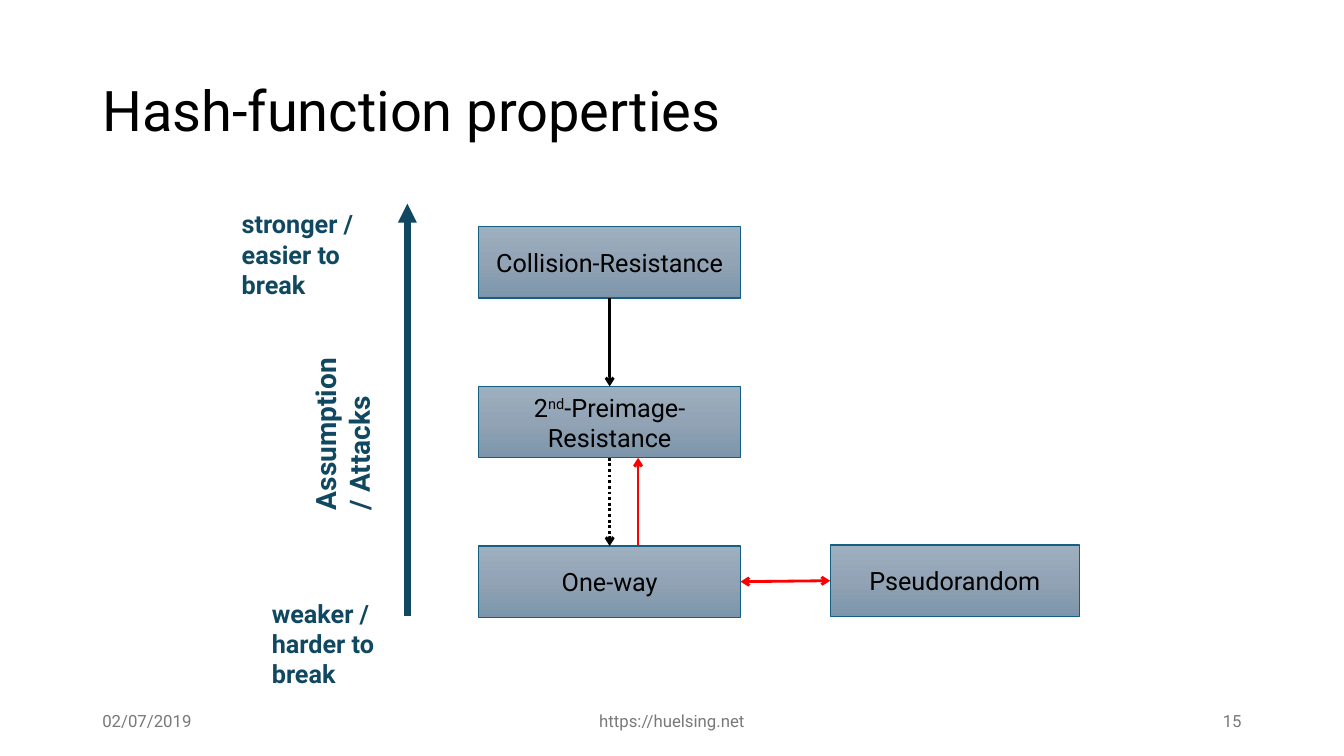
import copy

import pptx
import pptx.util
import pptx.dml.color
import pptx.enum.dml
import pptx.enum.shapes
import pptx.enum.text
import pptx.oxml.ns
import pptx.oxml.xmlchemy

Pt = pptx.util.Pt
ALIGN = pptx.enum.text.PP_ALIGN
ANCHOR = pptx.enum.text.MSO_ANCHOR
FONT = "Roboto"
HUES = {
    "ink": "000000", "gray": "797979", "navy": "104862", "edge": "156082",
    "red": "FF0000", "top": "9EAFBF", "mid": "91A3B4", "low": "7C95AB",
}


def hue(name):
    return pptx.dml.color.RGBColor.from_string(HUES[name])


def write(shape, text, size, color, bold=False, align=ALIGN.LEFT, anchor=ANCHOR.TOP):
    """Fill a shape with text; a ^ pair marks a superscript part."""
    frame = shape.text_frame
    frame.word_wrap = True
    frame.vertical_anchor = anchor
    frame.text = text.replace("^", "")
    for para in frame.paragraphs:
        para.alignment = align
    if "^" in text:
        para = frame.paragraphs[0]
        para.text = ""
        for i, part in enumerate(text.split("^")):
            run = para.add_run()
            run.text = part
            if i % 2:
                run.font._element.set("baseline", "30000")
    for para in frame.paragraphs:
        for run in para.runs:
            run.font.name = FONT
            run.font.size = Pt(size)
            run.font.bold = bold
            run.font.color.rgb = hue(color)


def label(slide, box, *args, **style):
    shape = slide.shapes.add_textbox(*map(Pt, box))
    write(shape, *args, **style)
    return shape


def node(slide, box, text):
    """Gradient rectangle with centred text."""
    shape = slide.shapes.add_shape(
        pptx.enum.shapes.MSO_SHAPE.RECTANGLE, *map(Pt, box))
    shape.shadow.inherit = False
    shape.line.color.rgb = hue("edge")
    shape.line.width = Pt(1)
    fill = shape.fill
    fill.gradient()
    fill.gradient_angle = 270
    first = shape._element.spPr.find(".//" + pptx.oxml.ns.qn("a:gs"))
    first.addnext(copy.deepcopy(first))
    for stop, name, pos in zip(fill.gradient_stops, ("top", "mid", "low"), (0, 0.5, 1)):
        stop.color.rgb = hue(name)
        stop.position = pos
    write(shape, text, 18, "ink", align=ALIGN.CENTER, anchor=ANCHOR.MIDDLE)
    return shape


def arrow(slide, start, end, color, width=2, tip="arrow", both=False, dash=None):
    line = slide.shapes.add_connector(
        pptx.enum.shapes.MSO_CONNECTOR.STRAIGHT, *map(Pt, start + end))
    line.line.color.rgb = hue(color)
    line.line.width = Pt(width)
    if dash:
        line.line.dash_style = dash
    props = line._element.spPr
    pen = props.find(pptx.oxml.ns.qn("a:ln"))
    for tag in ("a:headEnd", "a:tailEnd") if both else ("a:tailEnd",):
        mark = pptx.oxml.xmlchemy.OxmlElement(tag)
        mark.set("type", tip)
        pen.append(mark)
    props.append(pptx.oxml.xmlchemy.OxmlElement("a:effectLst"))
    return line


def link(slide, a, exit, b, entry, color, **style):
    """Arrow joined to the side middles of two nodes."""
    line = arrow(slide, (0, 0), (0, 0), color, **style)
    line.begin_connect(a, exit)
    line.end_connect(b, entry)


def head(slide, box):
    shape = label(slide, box, "Hash-function properties", 40, "ink", anchor=ANCHOR.MIDDLE)
    shape.text_frame.paragraphs[0].line_spacing = 0.9


def scale(slide, box):
    """Strength axis with its labels."""
    x, y, w, h = box
    arrow(slide, (x + w, y + h), (x + w, y), "navy", width=4.5, tip="triangle")
    title = label(slide, (x + 12, y + 132, 133, 55), "Assumption / Attacks",
                  20, "navy", bold=True)
    title.rotation = 270
    label(slide, (x, y, 102, 73), "stronger / easier to break", 18, "navy", bold=True)
    label(slide, (x + 21.5, y + 278, 106, 73), "weaker /\nharder to break",
          18, "navy", bold=True)


def graph(slide, box):
    """Column of properties, one to the side, and what implies what."""
    x, y, w, h = box
    tall, side = 51, 178
    wide, step = 187, (h - tall) / 2
    names = ("Collision-Resistance", "2^nd^-Preimage-Resistance", "One-way")
    coll, second, one = [node(slide, (x, y + i * step, wide, tall), name)
                         for i, name in enumerate(names)]
    rand = node(slide, (x + w - side, y + h - tall - 0.7, side, tall), "Pseudorandom")
    link(slide, coll, 2, second, 0, "ink")
    link(slide, second, 2, one, 0, "ink",
         dash=pptx.enum.dml.MSO_LINE.ROUND_DOT)
    back = x + wide / 2 + 20.3
    arrow(slide, (back, y + 2 * step), (back, y + step + tall), "red")
    link(slide, one, 3, rand, 1, "red", both=True)


def foot(slide, box):
    """Date, address and page number."""
    x, y, w, h = box
    parts = (("02/07/2019", 0, 216, ALIGN.LEFT),
             ("https://huelsing.net", (w - 324) / 2, 324, ALIGN.CENTER),
             ("15", w - 216, 216, ALIGN.RIGHT))
    for text, left, wide, align in parts:
        label(slide, (x + left, y, wide, h), text, 12, "gray",
              align=align, anchor=ANCHOR.MIDDLE)


def main():
    deck = pptx.Presentation()
    deck.slide_width, deck.slide_height = Pt(960), Pt(540)
    slide = deck.slides.add_slide(deck.slide_layouts[6])
    head(slide, (66, 28.8, 828, 104.4))
    scale(slide, (165.6, 145.5, 125.4, 294.5))
    graph(slide, (342, 162, 429, 279))
    foot(slide, (66, 500.5, 828, 28.8))
    deck.save("out.pptx")


if __name__ == "__main__":
    main()
